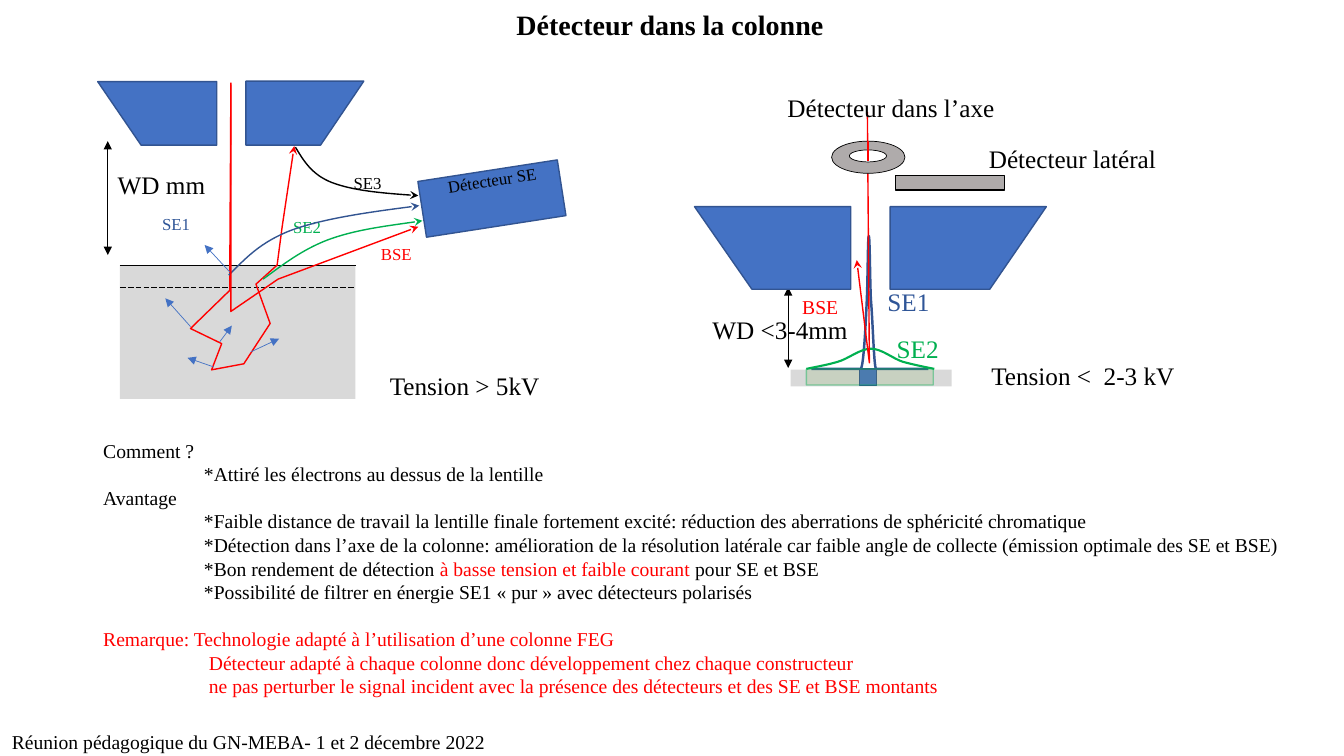
from typing import Any, NamedTuple, Optional, Union

from lxml.etree import SubElement
from pptx import Presentation
from pptx.dml.color import RGBColor
from pptx.enum.dml import MSO_LINE
from pptx.enum.shapes import MSO_CONNECTOR, MSO_SHAPE
from pptx.enum.text import MSO_ANCHOR, MSO_AUTO_SIZE, PP_ALIGN
from pptx.oxml.ns import qn
from pptx.util import Pt

class Theme:
    font = "Times New Roman"
    title, large, body, small = 20, 18, 14, 12
    black, white, red, green, leaf = "000000", "FFFFFF", "FF0000", "00B050", "70AD47"
    blue, edge, navy, sample, metal = "4472C4", "325491", "2F5597", "D9D9D9", "AFABAB"

Box = tuple[float, float, float, float]

class Block(NamedTuple):
    kind: MSO_SHAPE
    box: Box
    fill: str
    line: Optional[str] = None
    width: float = 1
    rotation: float = 0
    alphas: tuple[int, ...] = ()

class Trace(NamedTuple):
    """An outline: a step of 2 numbers is a line, a step of 6 a Bezier curve."""
    steps: tuple[tuple[float, ...], ...]
    line: str
    width: float = 1
    tail: Optional[str] = "stealth"
    fill: Optional[str] = None

class Rule(NamedTuple):
    start: tuple[float, float]
    end: tuple[float, float]
    line: str = Theme.black
    width: float = 0.5
    head: Optional[str] = None
    tail: Optional[str] = None
    dash: Optional[MSO_LINE] = None

class Label(NamedTuple):
    text: str
    box: Box
    size: float = Theme.large
    color: str = Theme.black
    rotation: float = 0

Item = Union[Block, Trace, Rule, Label]

def apply(target: Any, values: dict[str, Any]) -> None:
    for name, value in values.items():
        setattr(target, name, value)

def write(para: Any, text: str, size: float, color: str, bold: bool = False) -> None:
    span = para.add_run()
    span.text = text
    apply(span.font, {"name": Theme.font, "size": Pt(size), "bold": bold})
    span.font.color.rgb = RGBColor.from_string(color)

def paint(fill_format: Any, color: Optional[str]) -> None:
    if color:
        fill_format.solid()
        fill_format.fore_color.rgb = RGBColor.from_string(color)
    else:
        fill_format.background()

def stroke(shape: Any, item: Any, head: Optional[str] = None, tail: Optional[str] = None) -> None:
    paint(shape.line.fill, item.line)
    shape.line.width = Pt(item.width)
    for tag, kind in (("a:headEnd", head), ("a:tailEnd", tail)):
        if kind:
            SubElement(shape.element.spPr.get_or_add_ln(), qn(tag), type=kind)

def draw_block(shapes: Any, item: Block) -> None:
    shape = shapes.add_shape(item.kind, *map(Pt, item.box))
    shape.rotation = item.rotation
    shape.shadow.inherit = False
    paint(shape.fill, item.fill)
    stroke(shape, item)
    for color, alpha in zip(shape.element.spPr.iter(qn("a:srgbClr")), item.alphas):
        SubElement(color, qn("a:alpha"), val=str(alpha * 1000))

def draw_trace(shapes: Any, item: Trace) -> None:
    first, *rest = [(Pt(x), Pt(y)) for step in item.steps for x, y in zip(step[::2], step[1::2])]
    builder = shapes.build_freeform(*first)
    builder.add_line_segments(rest, close=item.fill is not None)
    shape = builder.convert_to_shape()
    shape.shadow.inherit = False
    paint(shape.fill, item.fill)
    stroke(shape, item, tail=item.tail)
    bend(shape, item.steps)

def bend(shape: Any, steps: tuple[tuple[float, ...], ...]) -> None:
    """Join each curve's three line segments into one Bezier segment."""
    segments = iter(list(shape.element.spPr.iter(qn("a:lnTo"))))
    for step in steps[1:]:
        segment = next(segments)
        if len(step) == 6:
            segment.tag = qn("a:cubicBezTo")
            for extra in (next(segments), next(segments)):
                segment.append(extra[0])
                extra.getparent().remove(extra)

def draw_rule(shapes: Any, item: Rule) -> None:
    shape = shapes.add_connector(MSO_CONNECTOR.STRAIGHT, *map(Pt, item.start + item.end))
    if item.dash:
        shape.line.dash_style = item.dash
    stroke(shape, item, item.head, item.tail)
    SubElement(shape.element.spPr, qn("a:effectLst"))

def draw_label(shapes: Any, item: Label) -> None:
    shape = shapes.add_textbox(*map(Pt, item.box))
    shape.rotation = item.rotation
    shape.text_frame.word_wrap = False
    write(shape.text_frame.paragraphs[0], item.text, item.size, item.color)

DRAW = {Block: draw_block, Trace: draw_trace, Rule: draw_rule, Label: draw_label}

def lens(outer: float, foot: float, inner: float, top: float, bottom: float) -> Trace:
    return Trace(((foot, bottom), (outer, top), (inner, top), (inner, bottom)), Theme.edge, 1, None, Theme.blue)

def distance(x: float, top: float, bottom: float) -> Rule:
    return Rule((x, top), (x, bottom), head="triangle", tail="triangle")

RECT, OVAL, BLACK, RED = MSO_SHAPE.RECTANGLE, MSO_SHAPE.OVAL, Theme.black, Theme.red
SECONDARIES = (((164.9, 195.1), (146.2, 175)), ((152.6, 262.1), (133.9, 255.6)), ((157, 244.1), (165.6, 232.6)),
               ((136.1, 233.3), (118.1, 213.1)), ((179.3, 251.3), (199.4, 241.9)))
SIDE_DETECTOR: list[Item] = [
    lens(69.8, 100.8, 154.8, 58.3, 103.7), lens(259.9, 229, 175.7, 58, 103.7),
    Block(RECT, (85.7, 189.4, 168.2, 95.6), Theme.sample),
    Rule((85.7, 189.7), (254, 189.7)),
    Rule((85.7, 205.2), (253.4, 205.2), dash=MSO_LINE.LONG_DASH),
    Label("SE3", (245.5, 120.2, 34.6, 21.6), Theme.small),
    Trace(((164.9, 60.5), (164.9, 103, 164.2, 164.9, 164.2, 207.4), (136.1, 234.7), (158.4, 245.5), (151.2, 264.2),
           (174.2, 259.9), (193, 231.1), (182.9, 203), (198, 189.4), (201.6, 162), (210.2, 104.4)), RED),
    *(Rule(start, end, Theme.blue, tail="triangle") for start, end in SECONDARIES),
    Label("SE1", (108.7, 149.4, 34.6, 21.6), Theme.small, Theme.navy),
    Label("SE2", (202.3, 151.2, 34.6, 21.6), Theme.small, Theme.green),
    Block(RECT, (301, 121.7, 100.8, 40.3), Theme.blue, Theme.edge, rotation=-8.8),
    Label("Détecteur SE", (312.5, 117.8, 78, 21.6), Theme.small, rotation=-8.7),
    Trace(((187.9, 199.4), (201.6, 189.4, 215.3, 178.6, 234, 171.4),
           (253.4, 164.2, 277.2, 161.3, 301.7, 157.7)), Theme.green),
    Trace(((211, 105.1), (216.7, 114.5, 222.5, 124.6, 236.9, 130.3),
           (252, 136.1, 275.8, 138.2, 298.8, 139.7)), BLACK),
    Trace(((163.4, 196.6), (175, 185, 185.8, 172.8, 208.8, 164.2),
           (231.1, 156.2, 265.7, 151.2, 299.5, 146.9)), Theme.edge),
    Trace(((164.9, 59), (164.9, 113.8, 164.9, 167.8, 164.9, 222.5), (198.7, 199.4), (298.8, 162)), RED),
    Label("BSE", (265, 170.6, 36.7, 21.6), Theme.small, RED),
    Label("WD mm", (77, 117.4, 77.8, 28.8)),
    distance(77, 100.8, 182.2),
    Label("Tension > 5kV", (271.4, 261.1, 122.4, 28.8)),
]
COLUMN_DETECTOR: list[Item] = [
    distance(563, 205.2, 262.8),
    Label("WD <3-4mm", (501.8, 221, 111.6, 28.8)),
    Label("Tension <  2-3 kV", (701, 253.6, 146.2, 28.8)),
    lens(496.1, 537.1, 607.7, 147.6, 206.6), lens(747.4, 707, 635.8, 147.6, 206.6),
    Block(RECT, (564.8, 264, 115, 12), Theme.sample),
    Trace(((579.6, 263.5), (581.8, 263.5, 612, 263.5, 614.9, 263.5), (617, 261.4, 618.5, 229.7, 619.2, 213.8),
           (619.9, 198, 619.9, 168.5, 620.6, 168.5), (621.4, 168.5, 621.4, 198, 622.1, 213.8),
           (623.5, 229.7, 624.2, 260.6, 625.7, 263.5), (663.1, 263.5)), Theme.edge, 1.75, None),
    Trace(((576, 263.5), (586.1, 261.4, 591.1, 260.6, 598.3, 258.5), (606.2, 256.3, 614.2, 249.1, 622.1, 249.1),
           (630, 249.1, 637.9, 256.3, 645.1, 258.5), (653, 260.6, 660.2, 262.1, 667.4, 263.5)),
          Theme.green, 1.5, None),
    Label("SE1", (626.8, 200.9, 44.6, 28.8), color=Theme.navy),
    Label("SE2", (633.4, 234.7, 44.6, 28.8), color=Theme.green),
    Block(RECT, (614, 263.5, 12.2, 12), Theme.blue, Theme.edge),
    Block(RECT, (576, 263.5, 90.7, 11.5), Theme.leaf, Theme.green, alphas=(16, 41)),
    Trace(((619.6, 79.9), (621, 259.2), (612, 185.8)), RED),
    Label("BSE", (565.9, 207.4, 40, 24.5), Theme.body, RED),
    Block(RECT, (639.4, 125.3, 77.8, 10.5), Theme.metal, BLACK, 0),
    Block(OVAL, (594, 100.8, 52.4, 23), Theme.metal, BLACK, 0.5),
    Block(OVAL, (606.7, 107.1, 26.6, 8.6), Theme.white, BLACK, 0.5),
    Rule((619.9, 100.8), (619.9, 115.2), RED, 1),
    Label("Détecteur latéral", (699.3, 98.9, 139, 28.8)),
    Label("Détecteur dans l’axe", (555.4, 62.4, 164.2, 28.8)),
]
TAB, REMARK_TAB, REMARK_GAP = 72, 75.5, 16.8
# Each line: left margin, space before, then (text, colour) spans.
NOTES = [
    (0, 0, [("Comment ?", BLACK)]),
    (TAB, 0, [("*Attiré les électrons au dessus de la lentille", BLACK)]),
    (0, 0, [("Avantage", BLACK)]),
    (TAB, 0, [("*Faible distance de travail la lentille finale fortement excité: "
               "réduction des aberrations de sphéricité chromatique", BLACK)]),
    (TAB, 0, [("*Détection dans l’axe de la colonne: amélioration de la résolution latérale "
               "car faible angle de collecte (émission optimale des SE et BSE)", BLACK)]),
    (TAB, 0, [("*Bon rendement de détection ", BLACK), ("à basse tension et faible courant ", RED),
              ("pour SE et BSE", BLACK)]),
    (TAB, 0, [("*Possibilité de filtrer en énergie SE1 « pur » avec détecteurs polarisés", BLACK)]),
    (0, REMARK_GAP, [("Remarque: Technologie adapté à l’utilisation d’une colonne FEG", RED)]),
    (REMARK_TAB, 0, [("Détecteur adapté à chaque colonne donc développement chez chaque constructeur", RED)]),
    (REMARK_TAB, 0, [("ne pas perturber le signal incident avec la présence des détecteurs "
                      "et des SE et BSE montants", RED)]),
]

def fill_placeholders(title: Any, body: Any) -> None:
    for holder, box, wrap in ((title, (360.9, 1.6, 235.4, 31.7), False), (body, (66.5, 309.8, 858.2, 193.7), True)):
        apply(holder, dict(zip(("left", "top", "width", "height"), map(Pt, box))))
        apply(holder.text_frame, {"word_wrap": wrap, "auto_size": MSO_AUTO_SIZE.NONE,
                                  "vertical_anchor": MSO_ANCHOR.TOP})
    write(title.text_frame.paragraphs[0], "Détecteur dans la colonne", Theme.title, BLACK, bold=True)
    for number, (margin, gap, spans) in enumerate(NOTES):
        para = body.text_frame.add_paragraph() if number else body.text_frame.paragraphs[0]
        properties = para._p.get_or_add_pPr()
        apply(properties, {})
        properties.attrib.update({"marL": str(Pt(margin)), "indent": "0"})
        SubElement(properties, qn("a:buNone"))
        apply(para, {"space_before": Pt(gap), "alignment": PP_ALIGN.LEFT})
        for text, color in spans:
            write(para, text, Theme.body, color)

deck = Presentation()
apply(deck, {"slide_width": Pt(960), "slide_height": Pt(540)})
page = deck.slides.add_slide(deck.slide_layouts[1])
fill_placeholders(page.shapes.title, page.placeholders[1])
for scheme in (SIDE_DETECTOR, COLUMN_DETECTOR):
    group = page.shapes.add_group_shape()
    for item in scheme:
        DRAW[type(item)](group.shapes, item)
draw_label(page.shapes, Label("Réunion pédagogique du GN-MEBA- 1 et 2 décembre 2022", (1.4, 517.7, 355.7, 24.5), Theme.body))
deck.save("out.pptx")
